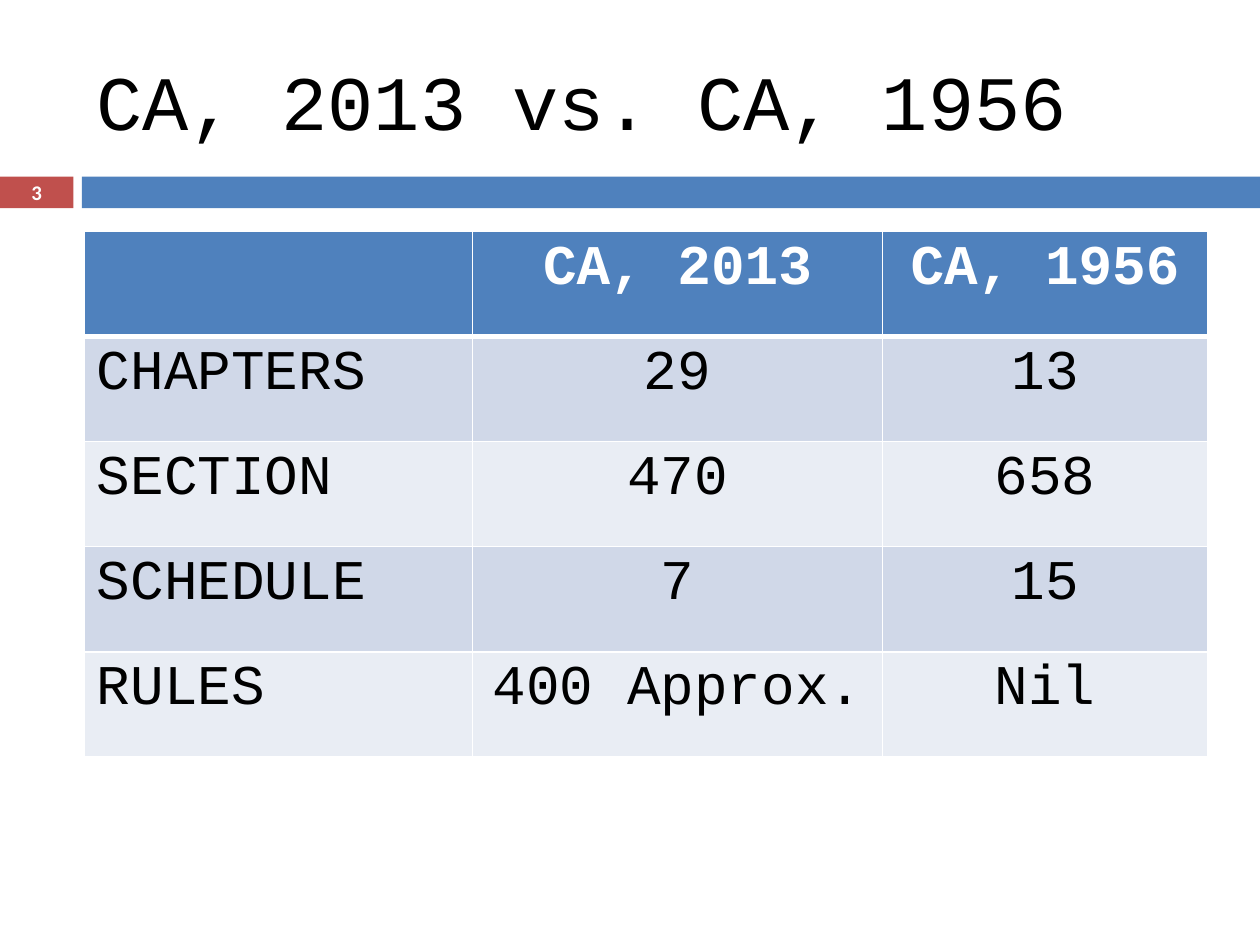
from lxml import etree
from pptx import Presentation
from pptx.dml.color import RGBColor
from pptx.enum.shapes import MSO_SHAPE as Shape
from pptx.enum.text import MSO_ANCHOR as Anchor, PP_ALIGN as Align
from pptx.oxml.ns import qn
from pptx.util import Cm, Pt

BLUE, RED, WHITE, BLACK = "4F81BD", "C0504D", "FFFFFF", "000000"
BANDS = ("D0D8E8", "E9EDF4")
BODY_FONT = "Courier New"
COLUMN_WIDTHS = (7.83, 8.26, 6.56)
ROW_HEIGHT = 2.12
ROWS = (
    ("", "CA, 2013", "CA, 1956"),
    ("CHAPTERS", "29", "13"),
    ("SECTION", "470", "658"),
    ("SCHEDULE", "7", "15"),
    ("RULES", "400 Approx.", "Nil"),
)


def rgb(color):
    return RGBColor.from_string(color)


def format_text(paragraph, size, color, font=BODY_FONT, bold=False, align=Align.LEFT):
    paragraph.alignment = align
    for run in paragraph.runs:
        run.font.name = font
        run.font.size = Pt(size)
        run.font.bold = bold
        run.font.color.rgb = rgb(color)


def add_bar(slide, left, top, width, height, color):
    bar = slide.shapes.add_shape(
        Shape.RECTANGLE, Cm(left), Cm(top), Cm(width), Cm(height))
    bar.shadow.inherit = False
    bar.fill.solid()
    bar.fill.fore_color.rgb = rgb(color)
    bar.line.fill.background()


def add_text(slide, left, top, width, height, text, size, color, **style):
    box = slide.shapes.add_textbox(Cm(left), Cm(top), Cm(width), Cm(height))
    frame = box.text_frame
    frame.word_wrap = True
    frame.vertical_anchor = Anchor.MIDDLE
    frame.text = text
    format_text(frame.paragraphs[0], size, color, **style)
    return frame


def set_borders(cell, top, bottom):
    """Draw white borders; top and bottom are widths in points."""
    properties = cell._tc.get_or_add_tcPr()
    for side, width in (("L", 1), ("R", 1), ("T", top), ("B", bottom)):
        line = etree.SubElement(properties, qn(f"a:ln{side}"), w=str(Pt(width)))
        fill = etree.SubElement(line, qn("a:solidFill"))
        etree.SubElement(fill, qn("a:srgbClr"), val=WHITE)


def add_comparison_table(slide, left, top):
    table = slide.shapes.add_table(
        len(ROWS), len(COLUMN_WIDTHS), Cm(left), Cm(top),
        Cm(sum(COLUMN_WIDTHS)), Cm(ROW_HEIGHT * len(ROWS))).table
    for column, width in zip(table.columns, COLUMN_WIDTHS):
        column.width = Cm(width)
    for row_index, texts in enumerate(ROWS):
        table.rows[row_index].height = Cm(ROW_HEIGHT)
        header = row_index == 0
        for column_index, text in enumerate(texts):
            cell = table.cell(row_index, column_index)
            set_borders(cell, 3 if row_index == 1 else 1, 3 if header else 1)
            cell.fill.solid()
            cell.fill.fore_color.rgb = rgb(
                BLUE if header else BANDS[(row_index - 1) % 2])
            cell.text_frame.text = text
            format_text(cell.text_frame.paragraphs[0], 32,
                        WHITE if header else BLACK, bold=header,
                        align=Align.CENTER if column_index else Align.LEFT)


def main():
    presentation = Presentation()
    presentation.slide_width, presentation.slide_height = Cm(25.4), Cm(19.05)
    slide = presentation.slides.add_slide(presentation.slide_layouts[6])

    add_bar(slide, 0, 3.56, 1.48, 0.64, RED)
    add_bar(slide, 1.65, 3.56, 23.75, 0.64, BLUE)
    add_text(slide, 1.7, 0.64, 22.65, 2.75, "CA, 2013 vs. CA, 1956", 44, BLACK)
    add_comparison_table(slide, 1.7, 4.66)
    number = add_text(slide, 0, 3.54, 1.48, 0.68, "3", 11.9, WHITE,
                      font="Calibri", bold=True, align=Align.CENTER)
    number.margin_top = number.margin_bottom = 0

    presentation.save("out.pptx")


if __name__ == "__main__":
    main()
